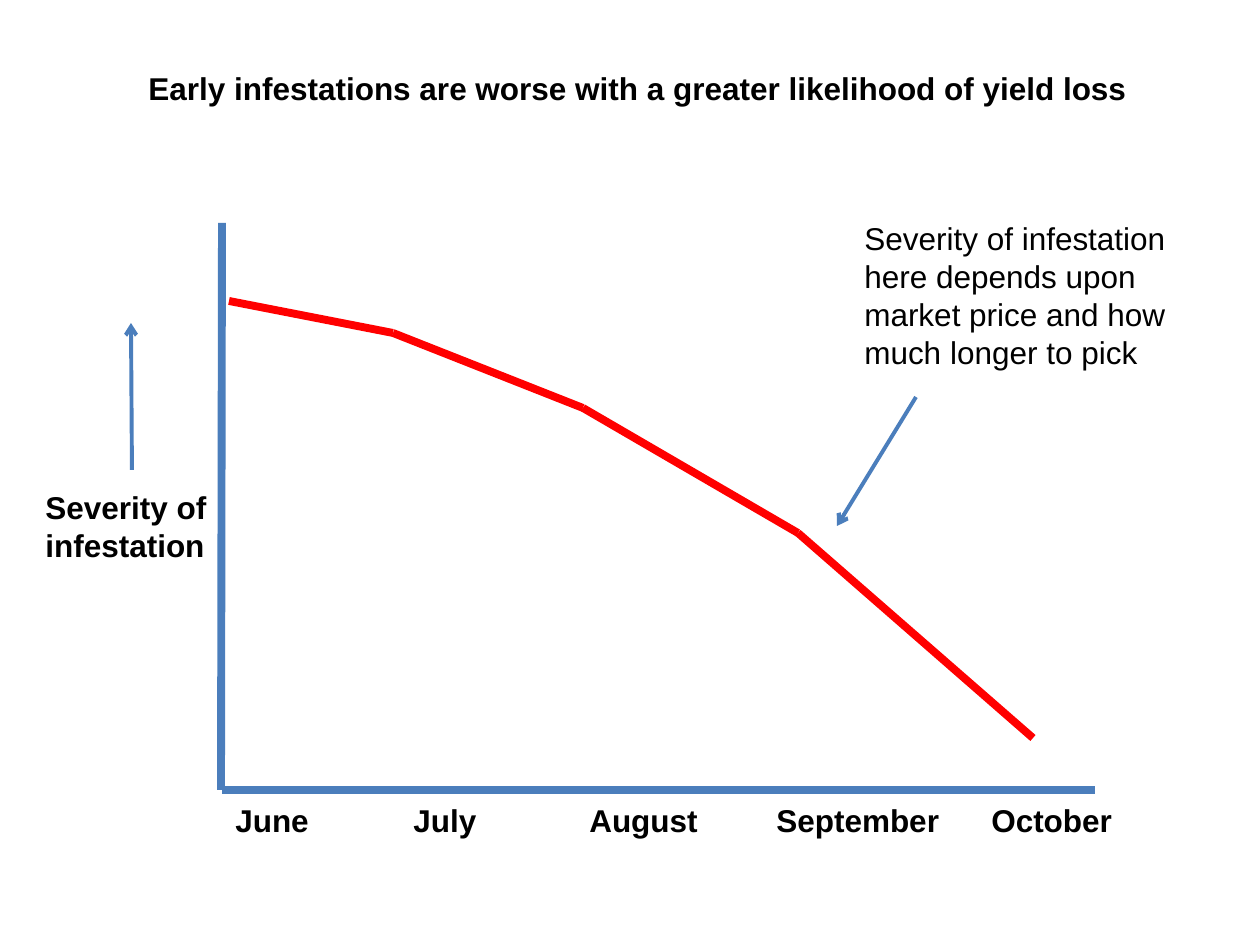
"""Build a slide showing infestation severity falling from June to October."""
from dataclasses import dataclass

from pptx import Presentation
from pptx.dml.color import RGBColor
from pptx.enum.shapes import MSO_CONNECTOR
from pptx.enum.text import MSO_AUTO_SIZE
from pptx.oxml.ns import qn
from pptx.slide import Slide
from pptx.util import Emu, Pt
from lxml.etree import SubElement, Element

EMU_PER_PX = 914400 / 126


@dataclass(frozen=True)
class Theme:
    font: str = "Arial"
    text_size: int = 18
    text: RGBColor = RGBColor(0x00, 0x00, 0x00)
    axis: RGBColor = RGBColor(0x4B, 0x7E, 0xBC)
    curve: RGBColor = RGBColor(0xFF, 0x00, 0x00)
    heavy: float = 4.5
    light: float = 2.25


@dataclass(frozen=True)
class Label:
    text: str
    left: int
    top: int
    width: int
    height: int
    bold: bool = True
    tabs: tuple[int, ...] = ()


@dataclass(frozen=True)
class Line:
    start: tuple[int, int]
    end: tuple[int, int]
    color: RGBColor
    weight: float
    arrow: bool = False


THEME = Theme()
MONTHS = ("June", "July", "August", "September", "October")
MONTH_TABS = (178, 354, 541, 756)
CURVE_POINTS = ((229, 301), (393, 333), (583, 408), (798, 533), (1033, 738))

LABELS = (
    Label("Early infestations are worse with a greater likelihood of yield loss", 136, 63, 1036, 50),
    Label("Severity of infestation", 33, 482, 205, 89),
    Label("\t".join(MONTHS), 223, 795, 931, 50, tabs=MONTH_TABS),
    Label(
        "Severity of infestation here depends upon market price and how much longer to pick",
        852, 213, 339, 165, bold=False,
    ),
)
LINES = (
    Line((222, 223), (221, 790), THEME.axis, THEME.heavy),
    Line((222, 790), (1095, 790), THEME.axis, THEME.heavy),
    Line((132, 470), (131, 323), THEME.axis, THEME.light, arrow=True),
    Line((916, 397), (837, 526), THEME.axis, THEME.light, arrow=True),
    *(
        Line(start, end, THEME.curve, THEME.heavy)
        for start, end in zip(CURVE_POINTS, CURVE_POINTS[1:])
    ),
)


def px(length: int) -> Emu:
    return Emu(round(length * EMU_PER_PX))


def draw_label(slide: Slide, label: Label) -> None:
    box = slide.shapes.add_textbox(px(label.left), px(label.top), px(label.width), px(label.height))
    frame = box.text_frame
    frame.word_wrap = True
    frame.auto_size = MSO_AUTO_SIZE.SHAPE_TO_FIT_TEXT
    para = frame.paragraphs[0]
    para.add_run().text = label.text
    para.font.name = THEME.font
    para.font.size = Pt(THEME.text_size)
    para.font.bold = label.bold
    para.font.color.rgb = THEME.text
    if label.tabs:
        tab_list = Element(qn("a:tabLst"))
        for position in label.tabs:
            SubElement(tab_list, qn("a:tab"), pos=str(px(position)), algn="l")
        para._p.get_or_add_pPr().insert(0, tab_list)


def draw_line(slide: Slide, line: Line) -> None:
    connector = slide.shapes.add_connector(
        MSO_CONNECTOR.STRAIGHT, *(px(value) for value in line.start + line.end)
    )
    connector.line.color.rgb = line.color
    connector.line.width = Pt(line.weight)
    properties = connector._element.spPr
    if line.arrow:
        SubElement(properties.find(qn("a:ln")), qn("a:tailEnd"), type="arrow")
    SubElement(properties, qn("a:effectLst"))


def main() -> None:
    deck = Presentation()
    deck.slide_width, deck.slide_height = px(1260), px(945)
    slide = deck.slides.add_slide(deck.slide_layouts[6])
    for line in LINES:
        draw_line(slide, line)
    for label in LABELS:
        draw_label(slide, label)
    deck.save("out.pptx")


if __name__ == "__main__":
    main()
